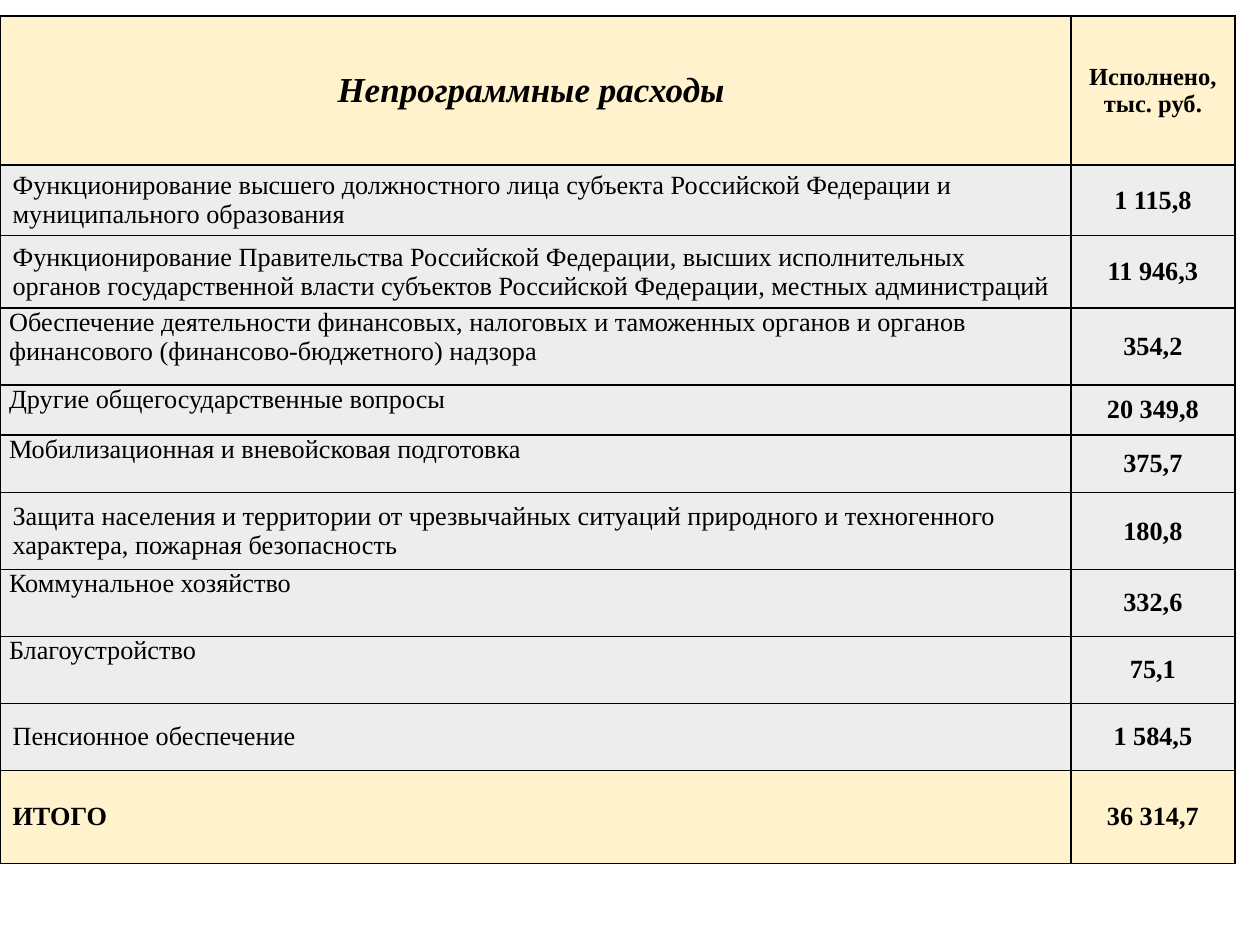
from lxml import etree
from pptx import Presentation
from pptx import util as u
from pptx.dml.color import RGBColor
from pptx.enum import text
from pptx.oxml import ns

BLACK = RGBColor(0x00, 0x00, 0x00)
CREAM = RGBColor(0xFF, 0xF2, 0xCC)
GREY = RGBColor(0xED, 0xED, 0xED)
FONT = "Times New Roman"

COLUMN_WIDTHS = (612, 93.6)
HEADER_HEIGHT = 85
TOTAL_HEIGHT = 53.25
ROOMY = (7.2, 3.6)
TIGHT = (5.2, 0)

EXPENSES = [
    ("Функционирование высшего должностного лица субъекта Российской Федерации "
     "и муниципального образования", "1 115,8", 40, ROOMY),
    ("Функционирование Правительства Российской Федерации, высших исполнительных "
     "органов государственной власти субъектов Российской Федерации, "
     "местных администраций", "11 946,3", 41.5, ROOMY),
    ("Обеспечение деятельности финансовых, налоговых и таможенных органов и органов "
     "финансового (финансово-бюджетного) надзора", "354,2", 44, TIGHT),
    ("Другие общегосударственные вопросы", "20 349,8", 28.5, TIGHT),
    ("Мобилизационная и вневойсковая подготовка", "375,7", 33, TIGHT),
    ("Защита населения и территории от чрезвычайных ситуаций природного и техногенного "
     "характера, пожарная безопасность", "180,8", 44, ROOMY),
    ("Коммунальное хозяйство", "332,6", 38.25, TIGHT),
    ("Благоустройство", "75,1", 38.25, TIGHT),
    ("Пенсионное обеспечение", "1 584,5", 38.25, ROOMY),
]


def add_borders(cell):
    properties = cell._tc.get_or_add_tcPr()
    for side in ("a:lnL", "a:lnR", "a:lnT", "a:lnB"):
        line = etree.SubElement(properties, ns.qn(side), w=str(u.Pt(1)))
        fill = etree.SubElement(line, ns.qn("a:solidFill"))
        etree.SubElement(fill, ns.qn("a:srgbClr"), val=str(BLACK))


def fill_cell(cell, words, color, size=15, bold=False, italic=False,
              centered=False, insets=ROOMY, anchor=text.MSO_ANCHOR.MIDDLE):
    add_borders(cell)
    cell.fill.solid()
    cell.fill.fore_color.rgb = color
    cell.margin_left = cell.margin_right = u.Pt(insets[0])
    cell.margin_top = cell.margin_bottom = u.Pt(insets[1])
    cell.vertical_anchor = anchor
    cell.text_frame.text = words
    para = cell.text_frame.paragraphs[0]
    para.alignment = text.PP_ALIGN.CENTER if centered else text.PP_ALIGN.LEFT
    font = para.runs[0].font
    font.name = FONT
    font.size = u.Pt(size)
    font.bold = bold
    font.italic = italic
    font.color.rgb = BLACK


def add_expense_table(page):
    heights = [HEADER_HEIGHT, *(row[2] for row in EXPENSES), TOTAL_HEIGHT]
    frame = page.shapes.add_table(len(heights), len(COLUMN_WIDTHS), u.Pt(0), u.Pt(9.25),
                                  u.Pt(sum(COLUMN_WIDTHS)), u.Pt(sum(heights)))
    table = frame.table
    table.first_row = False
    table.horz_banding = False
    for column, width in zip(table.columns, COLUMN_WIDTHS):
        column.width = u.Pt(width)
    for row, height in zip(table.rows, heights):
        row.height = u.Pt(height)
    return table


def fill_expense(table, index, name, amount, insets):
    anchor = text.MSO_ANCHOR.TOP if insets == TIGHT else text.MSO_ANCHOR.MIDDLE
    fill_cell(table.cell(index, 0), name, GREY, insets=insets, anchor=anchor)
    fill_cell(table.cell(index, 1), amount, GREY, bold=True, centered=True, insets=insets)


def main():
    deck = Presentation()
    deck.slide_width, deck.slide_height = u.Pt(720), u.Pt(540)
    page = deck.slides.add_slide(deck.slide_layouts[6])
    table = add_expense_table(page)
    fill_cell(table.cell(0, 0), "Непрограммные расходы ", CREAM, size=20,
              bold=True, italic=True, centered=True)
    fill_cell(table.cell(0, 1), "Исполнено, тыс. руб.", CREAM, size=14,
              bold=True, centered=True)
    for index, (name, amount, _, insets) in enumerate(EXPENSES, 1):
        fill_expense(table, index, name, amount, insets)
    last = len(EXPENSES) + 1
    fill_cell(table.cell(last, 0), "ИТОГО", CREAM, bold=True)
    fill_cell(table.cell(last, 1), "36 314,7", CREAM, bold=True, centered=True)
    deck.save("out.pptx")


if __name__ == "__main__":
    main()
